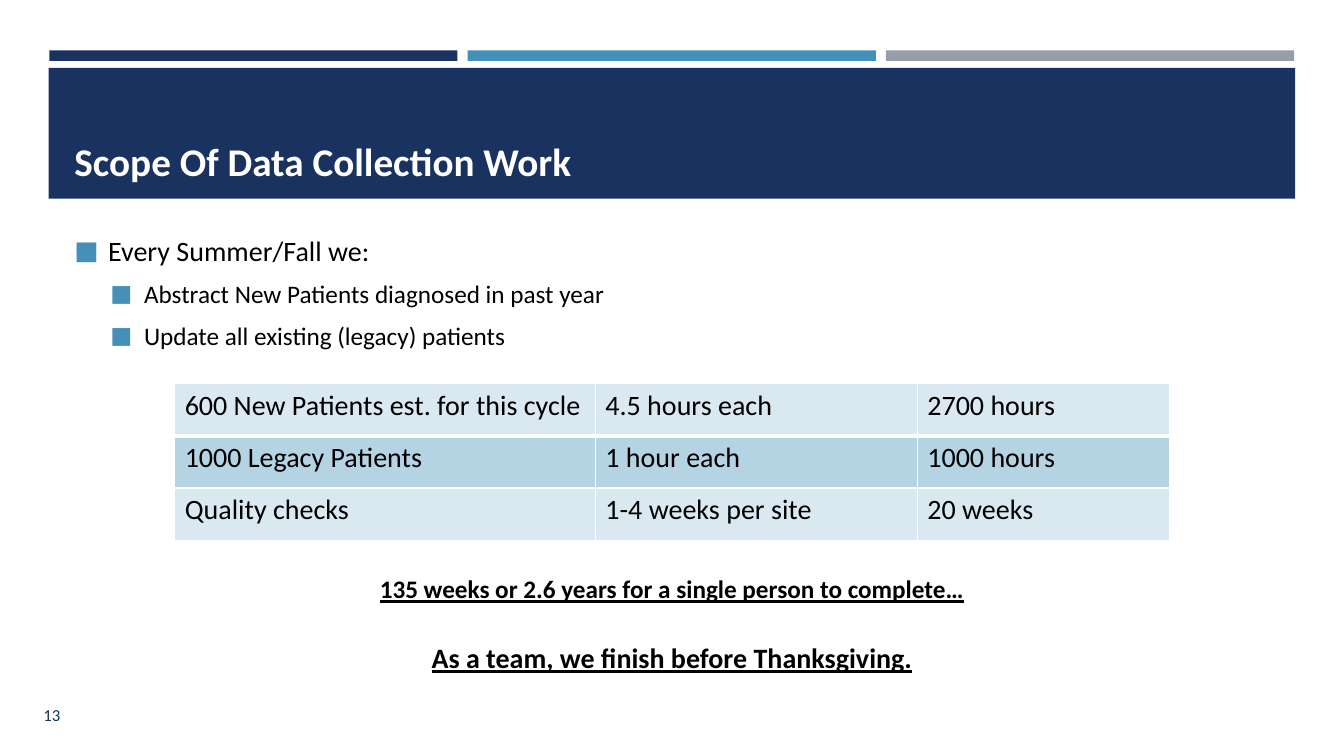
import lxml.etree
import pptx
import pptx.dml.color
import pptx.enum.shapes
import pptx.enum.text
import pptx.oxml.ns
import pptx.util

Pt = pptx.util.Pt
ALIGN = pptx.enum.text.PP_ALIGN
ANCHOR = pptx.enum.text.MSO_ANCHOR
NAVY, BLUE, GRAY = "1A3260", "4590B8", "969FA7"
BLACK, WHITE = "000000", "FFFFFF"
ROW_FILLS = ("DAE9F1", "B4D3E3")

WORKLOAD = [
    ("600 New Patients est. for this cycle", "4.5 hours each", "2700 hours"),
    ("1000 Legacy Patients", "1 hour each", "1000 hours"),
    ("Quality checks", "1-4 weeks per site", "20 weeks"),
]
COLUMN_WIDTHS = (300.5, 230, 180)
ROW_HEIGHT = 37.4


def color(value):
    """Turn a hex string into a colour."""
    return pptx.dml.color.RGBColor.from_string(value)


def add_element(parent, tag, **attributes):
    """Append a drawing element with the given attributes."""
    element = lxml.etree.SubElement(parent, pptx.oxml.ns.qn(tag))
    for name, value in attributes.items():
        element.set(name, str(value))
    return element


def write(para, text, size=20, fill=BLACK, bold=False, underline=False,
          align=ALIGN.LEFT, spacing=1.0, before=0, after=0):
    """Write one formatted span into a paragraph."""
    para.alignment = align
    para.line_spacing = spacing
    para.space_before = Pt(before)
    para.space_after = Pt(after)
    span = para.add_run()
    span.text = text
    span.font.name = "Calibri"
    span.font.size = Pt(size)
    span.font.bold = bold
    span.font.underline = underline
    span.font.color.rgb = color(fill)


def place(shape, left, top, width, height):
    """Move and size a shape."""
    shape.left, shape.top = Pt(left), Pt(top)
    shape.width, shape.height = Pt(width), Pt(height)


def prepare_frame(shape, anchor):
    """Make a text frame wrap, keep its size and anchor its text."""
    frame = shape.text_frame
    frame.word_wrap = True
    frame.auto_size = pptx.enum.text.MSO_AUTO_SIZE.NONE
    frame.vertical_anchor = anchor
    return frame


def add_bar(page, left, top, width, height, fill):
    """Draw a plain filled rectangle."""
    bar = page.shapes.add_shape(
        pptx.enum.shapes.MSO_SHAPE.RECTANGLE, Pt(left), Pt(top), Pt(width), Pt(height))
    bar.shadow.inherit = False
    bar.fill.solid()
    bar.fill.fore_color.rgb = color(fill)
    bar.line.fill.background()


def add_text(page, left, top, width, height, anchor=ANCHOR.TOP):
    """Add a text box and return its frame."""
    box = page.shapes.add_textbox(Pt(left), Pt(top), Pt(width), Pt(height))
    return prepare_frame(box, anchor)


def fill_title(page, text):
    """Place the title in front of the banner."""
    title = page.shapes.title
    place(title, 46, 55.5, 868, 80)
    title.element.getparent().append(title.element)
    frame = prepare_frame(title, ANCHOR.BOTTOM)
    write(frame.paragraphs[0], text, size=28, fill=WHITE, bold=True)


def add_bullet(para, indent):
    """Give a paragraph a hanging square bullet."""
    properties = para._p.get_or_add_pPr()
    properties.set("marL", str(Pt(indent)))
    properties.set("indent", str(Pt(-24)))
    bullet_color = add_element(properties, "a:buClr")
    add_element(bullet_color, "a:srgbClr", val=BLUE)
    add_element(properties, "a:buSzPct", val=92000)
    add_element(properties, "a:buFont", typeface="Calibri")
    add_element(properties, "a:buChar", char="■")


def fill_body(page, items):
    """Fill the body placeholder with (level, text) items."""
    body = page.placeholders[1]
    place(body, 46, 158.5, 466.5, 98)
    frame = prepare_frame(body, ANCHOR.MIDDLE)
    for index, (level, text) in enumerate(items):
        para = frame.add_paragraph() if index else frame.paragraphs[0]
        para.level = level
        add_bullet(para, 24 + 25.7 * level)
        write(para, text, size=20 - 2 * level, spacing=1.1, after=6)


def add_borders(cell, top, bottom):
    """Draw white borders around a cell."""
    properties = cell._tc.get_or_add_tcPr()
    for side, width in (("L", 1), ("R", 1), ("T", top), ("B", bottom)):
        line = add_element(properties, "a:ln" + side, w=Pt(width))
        add_element(add_element(line, "a:solidFill"), "a:srgbClr", val=WHITE)


def add_workload_table(page):
    """Add the banded table of patients and hours."""
    table = page.shapes.add_table(
        len(WORKLOAD), len(COLUMN_WIDTHS), Pt(124.8), Pt(273.8),
        Pt(sum(COLUMN_WIDTHS)), Pt(ROW_HEIGHT * len(WORKLOAD))).table
    for column, width in zip(table.columns, COLUMN_WIDTHS):
        column.width = Pt(width)
    for index, texts in enumerate(WORKLOAD):
        table.rows[index].height = Pt(ROW_HEIGHT)
        for cell, text in zip(table.rows[index].cells, texts):
            add_borders(cell, 3 if index == 1 else 1, 3 if index == 0 else 1)
            cell.fill.solid()
            cell.fill.fore_color.rgb = color(ROW_FILLS[index % 2])
            write(cell.text_frame.paragraphs[0], text)


def main():
    """Build the slide and save it."""
    deck = pptx.Presentation()
    deck.slide_width, deck.slide_height = Pt(960), Pt(540)
    page = deck.slides.add_slide(deck.slide_layouts[1])

    for index, fill in enumerate((NAVY, BLUE, GRAY)):
        add_bar(page, 35.2 + 298.8 * index, 36, 291.6, 7.6, fill)
    add_bar(page, 34.8, 48.5, 890.4, 93.5, NAVY)
    number = add_text(page, 24, 496, 36, 29, ANCHOR.MIDDLE)
    write(number.paragraphs[0], "13", size=12, fill=NAVY)

    fill_title(page, "Scope Of Data Collection Work")
    fill_body(page, [
        (0, "Every Summer/Fall we:"),
        (1, "Abstract New Patients diagnosed in past year"),
        (1, "Update all existing (legacy) patients"),
    ])
    add_workload_table(page)

    summary = add_text(page, 233.5, 404, 493, 103.5)
    emphasis = dict(bold=True, underline=True, align=ALIGN.CENTER, spacing=1.1)
    write(summary.paragraphs[0],
          "135 weeks or 2.6 years for a single person to complete…", size=18, **emphasis)
    write(summary.add_paragraph(),
          "As a team, we finish before Thanksgiving.", before=24, **emphasis)
    deck.save("out.pptx")


if __name__ == "__main__":
    main()
